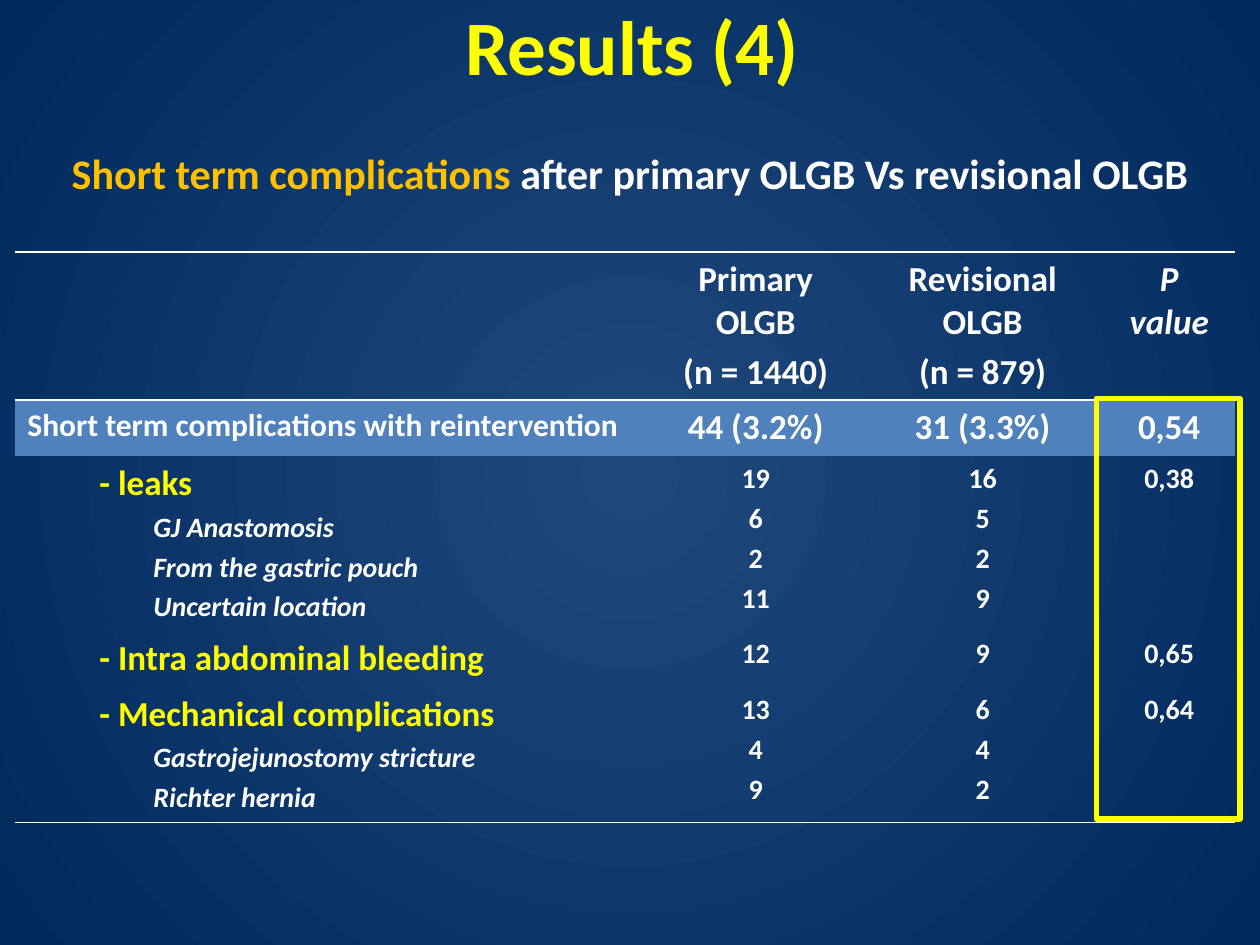
from pptx import Presentation
from pptx.dml.color import RGBColor
from pptx.enum.shapes import MSO_SHAPE
from pptx.enum.text import MSO_ANCHOR, PP_ALIGN
from pptx.oxml import parse_xml
from pptx.oxml.ns import nsdecls
from pptx.util import Cm, Pt

CENTER, LEFT = PP_ALIGN.CENTER, PP_ALIGN.LEFT
MIDDLE = MSO_ANCHOR.MIDDLE
RECTANGLE = MSO_SHAPE.RECTANGLE
TITLE_ONLY = 5

FONT = "Calibri"
WHITE, YELLOW, ORANGE, BLUE = "FFFFFF", "FFFF00", "FFC000", "4F81BD"
BACKGROUND = ("1F497D", "00295C")
NO_STYLE = "{2D5ABB26-0587-4C30-8999-92F81FD0307C}"

HEADING = "Results (4)"
TITLE = [("Short term complications ", ORANGE),
         ("after primary OLGB Vs revisional OLGB", WHITE)]

# Paragraph looks: size, colour, italic, alignment, left indent in cm
STYLES = {
    "head": (20, WHITE, False, CENTER, 0),
    "head italic": (20, WHITE, True, CENTER, 0),
    "total": (18, WHITE, False, LEFT, 0),
    "group": (20, YELLOW, False, LEFT, 1.45),
    "detail": (16, WHITE, True, LEFT, 2.54),
    "value": (16, WHITE, False, CENTER, 0),
}

# Each row: style of the first label, style of the values, cells as lists of lines
ROWS = [
    ("head", "head", [[], ["Primary OLGB", "(n = 1440)"],
                      ["Revisional OLGB", "(n = 879)"], ["P value"]]),
    ("total", "head", [["Short term complications with reintervention"],
                       ["44 (3.2%)"], ["31 (3.3%)"], ["0,54"]]),
    ("group", "value", [["- leaks", "GJ Anastomosis", "From the gastric pouch",
                         "Uncertain location"],
                        ["19", "6", "2", "11"], ["16", "5", "2", "9"], ["0,38"]]),
    ("group", "value", [["- Intra abdominal bleeding"], ["12"], ["9"], ["0,65"]]),
    ("group", "value", [["- Mechanical complications",
                         "Gastrojejunostomy stricture", "Richter hernia"],
                        ["13", "4", "9"], ["6", "4", "2"], ["0,64"]]),
]
COLUMN_WIDTHS = (12.8, 4.27, 4.88, 2.64)
ROW_HEIGHTS = (2.97, 1.12, 3.53, 1.12, 2.74)
HEADER_ROW, TOTAL_ROW, LAST_ROW = 0, 1, len(ROWS) - 1


def color(value):
    return RGBColor.from_string(value)


def box_at(left, top, width, height):
    return Cm(left), Cm(top), Cm(width), Cm(height)


def add_span(para, text, size, ink, italic=False):
    span = para.add_run()
    span.text = text
    span.font.name = FONT
    span.font.size = Pt(size)
    span.font.bold = True
    span.font.italic = italic
    span.font.color.rgb = color(ink)


def fill_background(page):
    inner, outer = BACKGROUND
    page.element.cSld.insert(0, parse_xml(
        f'<p:bg {nsdecls("p", "a")}><p:bgPr><a:gradFill rotWithShape="1"><a:gsLst>'
        f'<a:gs pos="0"><a:srgbClr val="{inner}"/></a:gs>'
        f'<a:gs pos="100000"><a:srgbClr val="{outer}"/></a:gs></a:gsLst>'
        '<a:path path="circle"><a:fillToRect l="50000" t="50000" r="50000" b="50000"/>'
        '</a:path></a:gradFill><a:effectLst/></p:bgPr></p:bg>'))


def write_lines(cell, lines, styles):
    for number, (line, style) in enumerate(zip(lines, styles)):
        frame = cell.text_frame
        para = frame.add_paragraph() if number else frame.paragraphs[0]
        size, ink, italic, alignment, indent = STYLES[style]
        para.alignment = alignment
        if number:
            para.space_before = Pt(size * 0.2)
        if indent:
            properties = para._p.get_or_add_pPr()
            properties.set("marL", str(Cm(indent)))
            properties.set("indent", "0")
        add_span(para, line, size, ink, italic)


def set_borders(cell, sides):
    """Draw white lines on the named sides (L, R, T, B) and none on the others."""
    properties = cell._tc.get_or_add_tcPr()
    for place, side in enumerate("LRTB"):
        paint = (f'<a:solidFill><a:srgbClr val="{WHITE}"/></a:solidFill>'
                 if side in sides else "<a:noFill/>")
        properties.insert(place, parse_xml(
            f'<a:ln{side} {nsdecls("a")} w="{Pt(1)}">{paint}</a:ln{side}>'))


def add_results_table(page):
    frame = page.shapes.add_table(
        len(ROWS), len(COLUMN_WIDTHS),
        *box_at(0.3, 5.08, sum(COLUMN_WIDTHS), sum(ROW_HEIGHTS)))
    table = frame.table
    table.first_row = table.horz_banding = False
    table._tbl.tblPr.find("{*}tableStyleId").text = NO_STYLE
    for column, width in zip(table.columns, COLUMN_WIDTHS):
        column.width = Cm(width)
    for row, height in zip(table.rows, ROW_HEIGHTS):
        row.height = Cm(height)

    borders = {HEADER_ROW: "TB", TOTAL_ROW: "T", LAST_ROW: "B"}
    for r, (label_style, value_style, cells) in enumerate(ROWS):
        for c, lines in enumerate(cells):
            cell = table.cell(r, c)
            if c == 0:
                styles = [label_style] + ["detail"] * len(lines)
            elif lines == ["P value"]:
                styles = ["head italic"]
            else:
                styles = [value_style] * len(lines)
            write_lines(cell, lines, styles)
            if r == TOTAL_ROW:
                cell.fill.solid()
                cell.fill.fore_color.rgb = color(BLUE)
            else:
                cell.fill.background()
            set_borders(cell, borders.get(r, ""))


def add_title(page):
    title = page.shapes.title
    title.left, title.top, title.width, title.height = box_at(0, 2.51, 25.4, 1.96)
    title.text_frame.vertical_anchor = MIDDLE
    para = title.text_frame.paragraphs[0]
    para.alignment = CENTER
    for text, ink in TITLE:
        add_span(para, text, 24, ink)


def add_heading(page):
    box = page.shapes.add_textbox(*box_at(-0.3, -0.69, 25.4, 3.18))
    frame = box.text_frame
    frame.word_wrap = True
    frame.vertical_anchor = MIDDLE
    frame.margin_left = Cm(0.95)
    para = frame.paragraphs[0]
    para.alignment = CENTER
    add_span(para, HEADING, 44, YELLOW)


def add_p_value_frame(page):
    outline = page.shapes.add_shape(RECTANGLE, *box_at(22.1, 8.03, 2.9, 8.48))
    outline.shadow.inherit = False
    outline.fill.background()
    outline.line.color.rgb = color(YELLOW)
    outline.line.width = Pt(3)


def main():
    deck = Presentation()
    deck.slide_width, deck.slide_height = Cm(25.4), Cm(19.05)
    page = deck.slides.add_slide(deck.slide_layouts[TITLE_ONLY])
    fill_background(page)
    add_title(page)
    add_results_table(page)
    add_heading(page)
    add_p_value_frame(page)
    deck.save("out.pptx")


if __name__ == "__main__":
    main()
